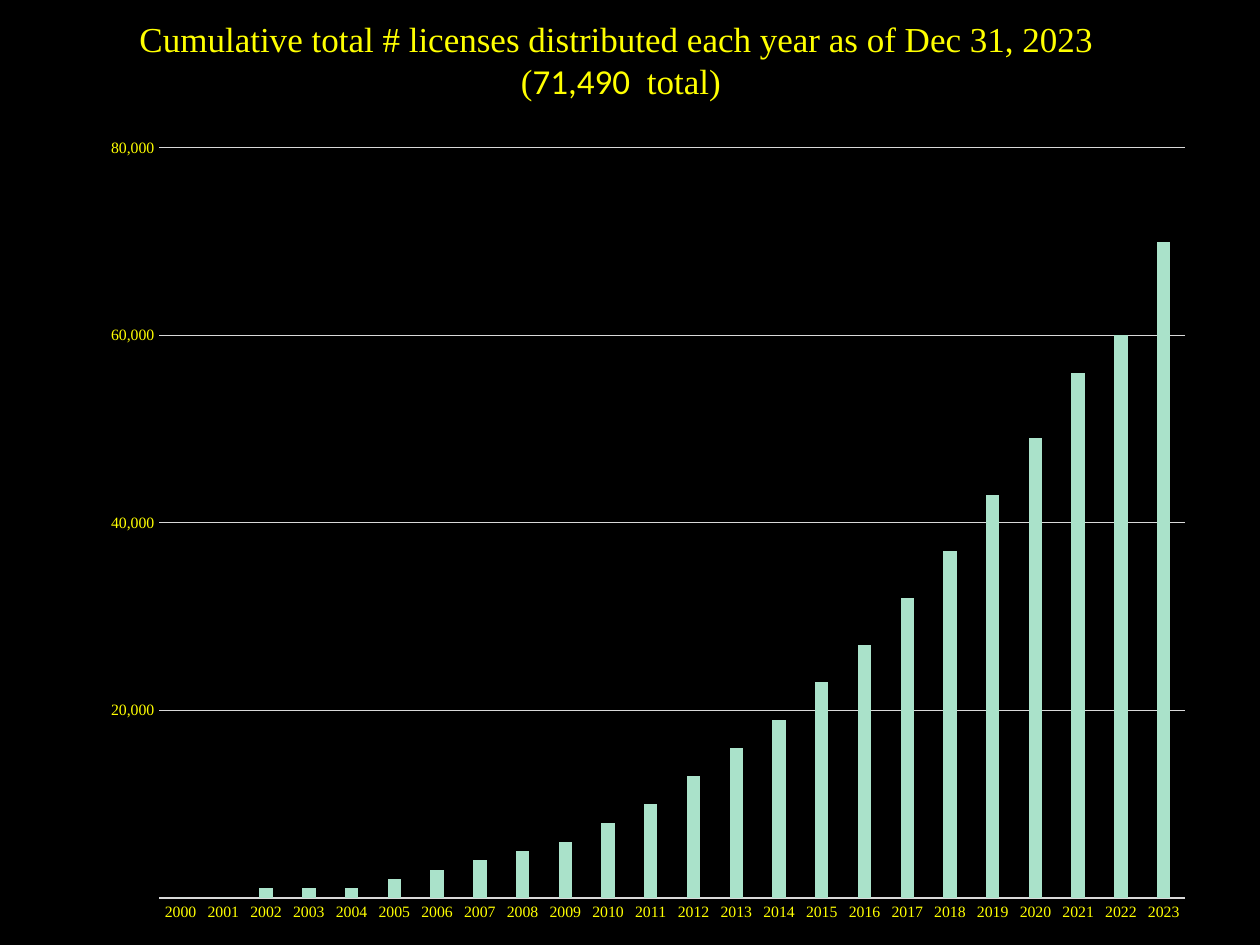
"""Build a slide charting the cumulative licenses distributed from 2000 to 2023."""
from lxml.etree import SubElement
from pptx import Presentation
from pptx.chart.data import CategoryChartData
from pptx.dml.color import RGBColor
from pptx.enum.chart import XL_CHART_TYPE, XL_TICK_MARK
from pptx.enum.text import MSO_ANCHOR, MSO_AUTO_SIZE, PP_ALIGN
from pptx.oxml.ns import qn
from pptx.util import Cm, Pt

BLACK = RGBColor(0x00, 0x00, 0x00)
YELLOW = RGBColor(0xFF, 0xFF, 0x00)
GRAY = RGBColor(0xD9, 0xD9, 0xD9)
MINT = RGBColor(0xAA, 0xE2, 0xCA)
SERIF = "Times New Roman"
SANS = "Calibri"

TITLE_LINES = [
    [("Cumulative total # licenses distributed each year as of Dec 31, 2023", SERIF)],
    [(" (", SERIF), ("71,490 ", SANS), (" total)", SERIF)],
]
LICENSES = [
    0, 0, 1000, 1000, 1000, 2000, 3000, 4000,
    5000, 6000, 8000, 10000, 13000, 16000, 19000, 23000,
    27000, 32000, 37000, 43000, 49000, 56000, 60000, 70000,
]
PLOT_AREA = {"x": 0.058, "y": 0.035, "w": 0.922, "h": 0.929}

presentation = Presentation()
presentation.slide_width = Cm(25.4)
presentation.slide_height = Cm(19.05)
slide = presentation.slides.add_slide(presentation.slide_layouts[5])
slide.background.fill.solid()
slide.background.fill.fore_color.rgb = BLACK

title = slide.shapes.title
title.left, title.top, title.width, title.height = Cm(0), Cm(0), Cm(24.97), Cm(2.41)
text_frame = title.text_frame
text_frame.word_wrap = True
text_frame.auto_size = MSO_AUTO_SIZE.NONE
text_frame.vertical_anchor = MSO_ANCHOR.MIDDLE
text_frame.margin_left = text_frame.margin_top = text_frame.margin_bottom = Cm(0.15)
text_frame.margin_right = Cm(0.36)
for index, line in enumerate(TITLE_LINES):
    paragraph = text_frame.add_paragraph() if index else text_frame.paragraphs[0]
    paragraph.alignment = PP_ALIGN.CENTER
    paragraph_properties = paragraph._p.get_or_add_pPr()
    paragraph_properties.set("marL", str(Cm(0.1)))
    paragraph_properties.set("indent", "0")
    for text, font_name in line:
        run = paragraph.add_run()
        run.text = text
        run.font.name = font_name
        run.font.size = Pt(20)
        run.font.color.rgb = YELLOW

chart_data = CategoryChartData(number_format="#,###")
chart_data.categories = [str(year) for year in range(2000, 2024)]
chart_data.add_series("Licenses", LICENSES)
chart = slide.shapes.add_chart(
    XL_CHART_TYPE.COLUMN_CLUSTERED, Cm(1.91), Cm(2.41), Cm(22.43), Cm(16.28), chart_data
).chart
chart.has_legend = False
chart.has_title = False
chart.font.name = SERIF
chart.font.size = Pt(10)
chart.font.color.rgb = BLACK

plot = chart.plots[0]
plot.gap_width = 219
plot.overlap = -27
plot.vary_by_categories = False
columns = plot.series[0]
columns.format.fill.solid()
columns.format.fill.fore_color.rgb = MINT
columns.format.line.fill.background()

category_axis, value_axis = chart.category_axis, chart.value_axis
for axis in (category_axis, value_axis):
    axis.major_tick_mark = axis.minor_tick_mark = XL_TICK_MARK.NONE
    axis.tick_labels.font.name = SERIF
    axis.tick_labels.font.size = Pt(9)
    axis.tick_labels.font.color.rgb = YELLOW
value_axis.minimum_scale = 0
value_axis.maximum_scale = 80000
value_axis.major_unit = 20000
value_axis.has_major_gridlines = True
value_axis.tick_labels.number_format = "#,###"
value_axis.tick_labels.number_format_is_linked = False
value_axis.format.line.fill.background()
for line in (category_axis.format.line, value_axis.major_gridlines.format.line):
    line.color.rgb = GRAY
    line.width = Pt(0.75)

plot_area = chart._chartSpace.chart.plotArea
for layout in plot_area.findall(qn("c:layout")):
    plot_area.remove(layout)
layout = SubElement(plot_area, qn("c:layout"))
plot_area.insert(0, layout)
manual_layout = SubElement(layout, qn("c:manualLayout"))
SubElement(manual_layout, qn("c:layoutTarget")).set("val", "inner")
for side in ("x", "y"):
    SubElement(manual_layout, qn(f"c:{side}Mode")).set("val", "edge")
for side, fraction in PLOT_AREA.items():
    SubElement(manual_layout, qn(f"c:{side}")).set("val", str(fraction))

presentation.save("out.pptx")
